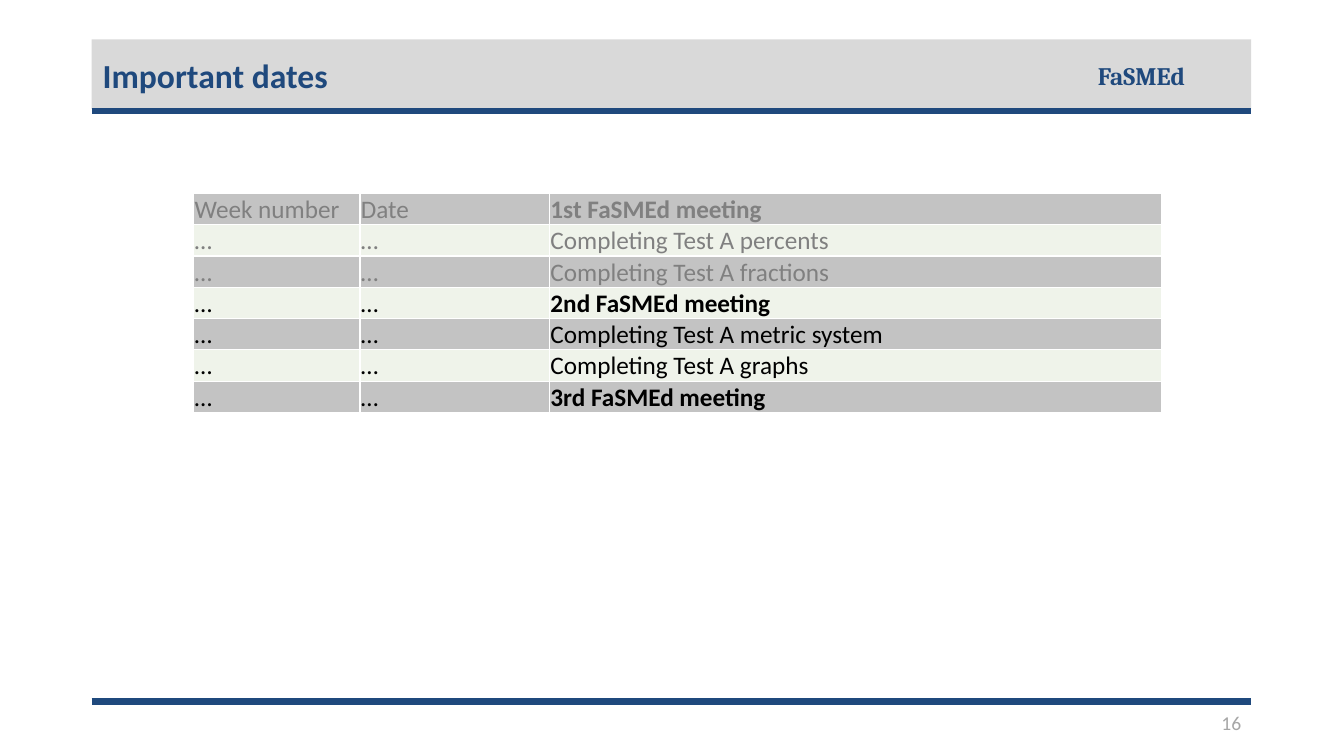
from dataclasses import dataclass

from lxml.etree import SubElement
from pptx import Presentation
from pptx.dml.color import RGBColor as RGB
from pptx.enum.shapes import MSO_CONNECTOR as Connector, MSO_SHAPE as Shape
from pptx.enum.text import MSO_ANCHOR as Anchor, PP_ALIGN as Align
from pptx.oxml.ns import qn
from pptx.util import Pt

PX = 9144  # EMU in one px, 100 px to the inch


@dataclass(frozen=True)
class Theme:
    navy: str = "1F497D"
    band: str = "D9D9D9"
    page: str = "A6A6A6"
    past: str = "808080"
    coming: str = "000000"
    row_fills: tuple = ("C3C3C3", "EFF3EA")
    border: str = "FFFFFF"
    body_font: str = "Calibri"
    brand_font: str = "Cambria"
    title_size: int = 24
    body_size: int = 18
    page_size: int = 14
    rule_width: float = 4.5


THEME = Theme()
LEFT, RIGHT = 91, 1241

# Weeks: (week number, date, activity, already past)
SCHEDULE = [
    ("Week number", "Date", "1st FaSMEd meeting", True),
    ("…", "…", "Completing Test A percents", True),
    ("…", "…", "Completing Test A fractions", True),
    ("…", "…", "2nd FaSMEd meeting", False),
    ("…", "…", "Completing Test A metric system", False),
    ("…", "…", "Completing Test A graphs", False),
    ("…", "…", "3rd FaSMEd meeting", False),
]


def px(*lengths):
    return [length * PX for length in lengths]


def write(frame, text, size=THEME.body_size, color=THEME.navy, font=THEME.body_font,
          bold=False, align=Align.LEFT, spacing=None):
    paragraph = frame.paragraphs[0]
    paragraph.alignment = align
    if spacing:
        paragraph.line_spacing = spacing
    run = paragraph.add_run()
    run.text = text
    run.font.name, run.font.size, run.font.bold = font, Pt(size), bold
    run.font.color.rgb = RGB.from_string(color)


def add_label(slide, box, text, anchor=Anchor.MIDDLE, **style):
    frame = slide.shapes.add_textbox(*px(*box)).text_frame
    frame.word_wrap = True
    frame.vertical_anchor = anchor
    write(frame, text, **style)


def add_band(slide, box):
    band = slide.shapes.add_shape(Shape.RECTANGLE, *px(*box))
    band.shadow.inherit = False
    band.fill.solid()
    band.fill.fore_color.rgb = RGB.from_string(THEME.band)
    band.line.fill.background()


def add_rule(slide, y):
    rule = slide.shapes.add_connector(Connector.STRAIGHT, *px(LEFT, y, RIGHT, y))
    rule.line.color.rgb = RGB.from_string(THEME.navy)
    rule.line.width = Pt(THEME.rule_width)
    SubElement(rule._element.spPr, qn("a:effectLst"))


def style_cell(cell, fill):
    cell.margin_left = cell.margin_right = cell.margin_top = PX
    cell.margin_bottom = 0
    properties = cell._tc.get_or_add_tcPr()
    for side in ("a:lnL", "a:lnR", "a:lnT", "a:lnB"):
        edge = SubElement(properties, qn(side), w=str(Pt(1)))
        SubElement(SubElement(edge, qn("a:solidFill")), qn("a:srgbClr"), val=THEME.border)
    cell.fill.solid()
    cell.fill.fore_color.rgb = RGB.from_string(fill)


def add_schedule(slide, left, top, widths, row_height):
    size = sum(widths), row_height * len(SCHEDULE)
    table = slide.shapes.add_table(len(SCHEDULE), len(widths),
                                   *px(left, top, *size)).table
    for column, width in zip(table.columns, widths):
        column.width = width * PX
    for r, (*entries, is_past) in enumerate(SCHEDULE):
        for c, entry in enumerate(entries):
            cell = table.cell(r, c)
            style_cell(cell, THEME.row_fills[r % 2])
            write(cell.text_frame, entry, bold=entry.endswith("meeting"),
                  color=THEME.past if is_past else THEME.coming)


def main():
    deck = Presentation()
    deck.slide_width, deck.slide_height = px(1333, 750)
    slide = deck.slides.add_slide(deck.slide_layouts[6])

    # Footer
    add_rule(slide, 696)
    add_label(slide, (1044, 700, 197, 34), "16", size=THEME.page_size,
              color=THEME.page, align=Align.RIGHT)

    # Header
    add_band(slide, (LEFT, 39, RIGHT - LEFT, 69))
    add_rule(slide, 110)
    add_label(slide, (1079, 55, 111, 40), "FaSMEd", anchor=Anchor.TOP,
              font=THEME.brand_font, bold=True)
    add_label(slide, (92, 41, 1150, 71), "Important dates",
              size=THEME.title_size, bold=True, spacing=0.9)

    # Schedule
    add_schedule(slide, left=192, top=192, widths=(165, 188, 607), row_height=31)

    deck.save("out.pptx")


if __name__ == "__main__":
    main()
